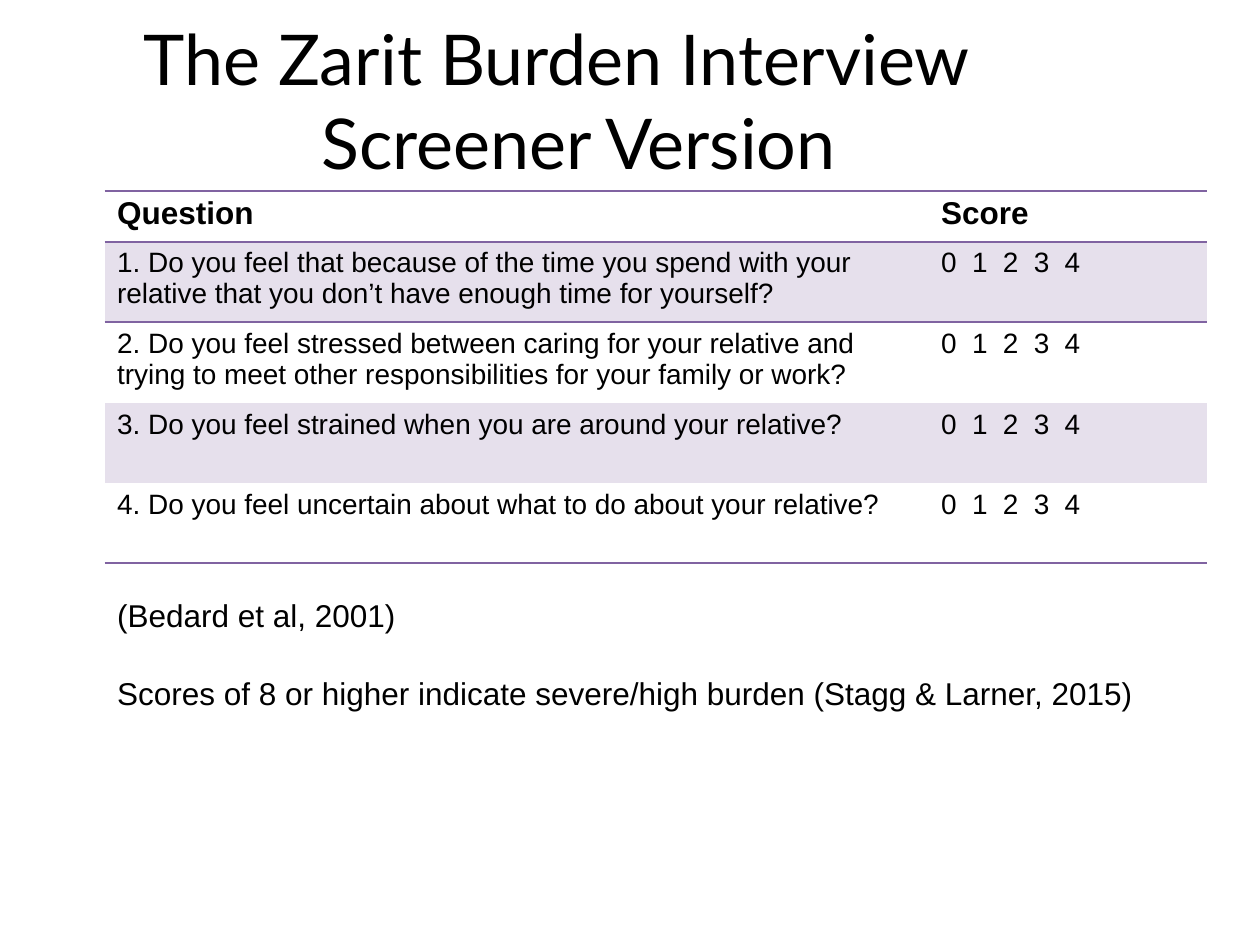
import pptx
import pptx.util
import pptx.dml.color
import pptx.enum.shapes
import lxml.etree

deck = pptx.Presentation()
deck.slide_width = pptx.util.Inches(10)
deck.slide_height = pptx.util.Inches(7.5)
wide, high = deck.slide_width / 100, deck.slide_height / 100
slide = deck.slides.add_slide(deck.slide_layouts[6])
DRAW = "http://schemas.openxmlformats.org/drawingml/2006/main"
PURPLE = "8063A1"
LEFT, SPAN = 8.3, 87.5


def tint(code):
    return pptx.dml.color.RGBColor.from_string(code)


def write(frame, text, size=18, font="Arial", bold=False, gap=0, inset=(0, 0), hang=None):
    frame.word_wrap = True
    frame.margin_left, frame.margin_top = [pptx.util.Inches(n) for n in inset]
    frame.margin_right = frame.margin_bottom = 0
    for i, line in enumerate(text.split("\n")):
        para = frame.paragraphs[0] if i == 0 else frame.add_paragraph()
        if i and gap:
            para.space_before = pptx.util.Pt(gap)
        if hang:
            props = para._p.get_or_add_pPr()
            props.set("marL", str(pptx.util.Inches(hang)))
            props.set("indent", str(-pptx.util.Inches(hang)))
        if "\t" in line:
            tabs = lxml.etree.SubElement(para._p.get_or_add_pPr(), f"{{{DRAW}}}tabLst")
            for n in range(1, 5):
                stop = pptx.util.Inches(0.245 * n)
                lxml.etree.SubElement(tabs, f"{{{DRAW}}}tab", pos=str(stop), algn="l")
        run = para.add_run()
        run.text = line
        run.font.size = pptx.util.Pt(size)
        run.font.name = font
        run.font.bold = bold
        run.font.color.rgb = tint("000000")


title = slide.shapes.add_textbox(
    int(11.4 * wide), int(1.6 * high), int(75.9 * wide), int(18 * high))
write(title.text_frame, "The Zarit Burden Interview Screener Version",
      size=40, font="Lato", hang=1.41)

rule = slide.shapes.add_connector(
    pptx.enum.shapes.MSO_CONNECTOR.STRAIGHT, int(LEFT * wide), int(59.6 * high),
    int((LEFT + SPAN) * wide), int(59.6 * high))
rule.line.color.rgb = tint(PURPLE)
rule.line.width = pptx.util.Pt(1)
lxml.etree.SubElement(rule._element.spPr, f"{{{DRAW}}}effectLst")

score = "0\t1\t2\t3\t4"
rows = [
    ("Question", "Score"),
    ("1. Do you feel that because of the time you spend with your relative "
     "that you don’t have enough time for yourself?", score),
    ("2. Do you feel stressed between caring for your relative and\n"
     "trying to meet other responsibilities for your family or work?", score),
    ("3. Do you feel strained when you are around your relative?", score),
    ("4. Do you feel uncertain about what to do about your relative?", score),
]
tall = [5.4, 8.5, 8.5, 8.5, 4.2]
grid = slide.shapes.add_table(
    len(rows), 2, int(LEFT * wide), int(20.2 * high),
    int(SPAN * wide), int(sum(tall) * high)).table
grid.first_row = grid.horz_banding = False
grid.columns[0].width = int(64.1 * wide)
grid.columns[1].width = int(23.4 * wide)

for r, row in enumerate(rows):
    grid.rows[r].height = int(tall[r] * high)
    lines = {"lnT": r < 3, "lnB": r < 2}
    for c, text in enumerate(row):
        cell = grid.cell(r, c)
        props = cell._tc.get_or_add_tcPr()
        for side in ("lnL", "lnR", "lnT", "lnB"):
            edge = lxml.etree.SubElement(props, f"{{{DRAW}}}{side}", w="12700")
            if lines.get(side):
                fill = lxml.etree.SubElement(edge, f"{{{DRAW}}}solidFill")
                lxml.etree.SubElement(fill, f"{{{DRAW}}}srgbClr", val=PURPLE)
            else:
                lxml.etree.SubElement(edge, f"{{{DRAW}}}noFill")
        if r % 2:
            cell.fill.solid()
            cell.fill.fore_color.rgb = tint("E6E0EC")
        else:
            cell.fill.background()
        inset = (0.23 if c else 0.1, 0.04 if r < 2 else 0.05)
        write(cell.text_frame, text, size=16 if r else 18, bold=r == 0)
        cell.margin_left, cell.margin_top = [pptx.util.Inches(n) for n in inset]
        cell.margin_right = cell.margin_bottom = 0

note = slide.shapes.add_textbox(
    int(9.2 * wide), int(63.1 * high), int(80.8 * wide), int(12.3 * high))
write(note.text_frame, "(Bedard et al, 2001)\n"
      "Scores of 8 or higher indicate severe/high burden (Stagg & Larner, 2015)",
      gap=23, inset=(0.01, 0))

deck.save("out.pptx")
